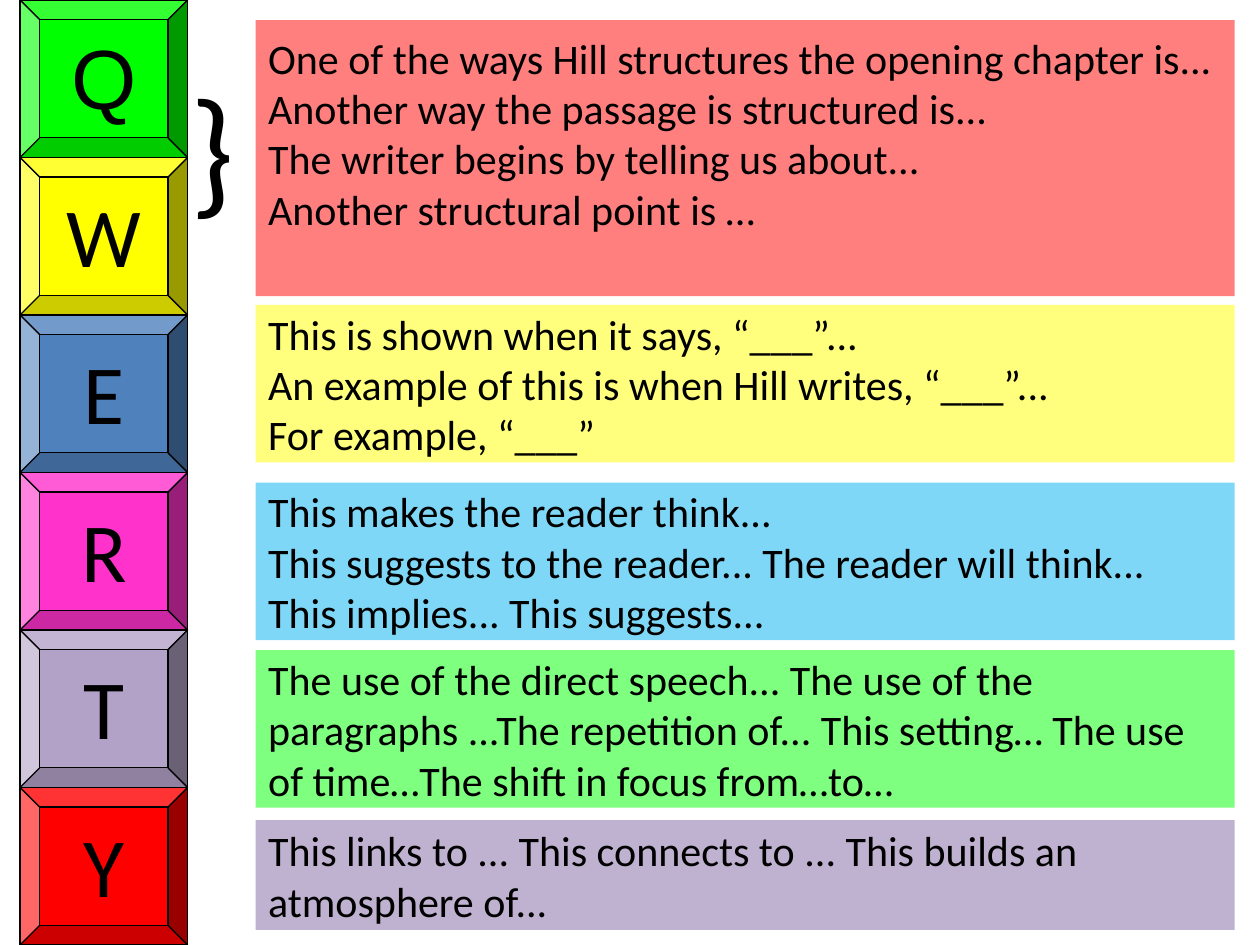
from pptx import Presentation
from pptx.dml.color import RGBColor
from pptx.enum.shapes import MSO_SHAPE
from pptx.enum.text import MSO_ANCHOR, MSO_AUTO_SIZE, PP_ALIGN
from pptx.oxml.ns import qn
from pptx.util import Inches, Pt
from lxml import etree

RECT, BEVEL = MSO_SHAPE.RECTANGLE, MSO_SHAPE.BEVEL
TOP, MIDDLE = MSO_ANCHOR.TOP, MSO_ANCHOR.MIDDLE
LEFT, CENTER = PP_ALIGN.LEFT, PP_ALIGN.CENTER
GROW = MSO_AUTO_SIZE.SHAPE_TO_FIT_TEXT

BLACK = RGBColor(0x00, 0x00, 0x00)
GREEN = RGBColor(0x00, 0xFF, 0x00)
YELLOW = RGBColor(0xFF, 0xFF, 0x00)
BLUE = RGBColor(0x4F, 0x81, 0xBD)
PINK = RGBColor(0xFF, 0x33, 0xCC)
LILAC = RGBColor(0xB3, 0xA2, 0xC7)
RED = RGBColor(0xFF, 0x00, 0x00)
SKY = RGBColor(0x00, 0xB0, 0xF0)
PURPLE = RGBColor(0x80, 0x64, 0xA2)

prs = Presentation()
prs.slide_width, prs.slide_height = Inches(10), Inches(7.5)
slide = prs.slides.add_slide(prs.slide_layouts[6])


def write(shape, text, size, align, anchor, font="Calibri"):
    frame = shape.text_frame
    frame.word_wrap = True
    frame.vertical_anchor = anchor
    frame.text = text
    for para in frame.paragraphs:
        para.alignment = align
        for run in para.runs:
            run.font.name = font
            run.font.size = Pt(size)
            run.font.color.rgb = BLACK


def add_block(kind, left, top, width, height, color):
    shape = slide.shapes.add_shape(
        kind, Inches(left), Inches(top), Inches(width), Inches(height))
    shape.shadow.inherit = False
    shape.fill.solid()
    shape.fill.fore_color.rgb = color
    return shape


# Sentence starters: top, height, colour, opacity in percent, text
# (\v breaks a line, \n starts a paragraph)
panels = [
    (0.16, 2.19, RED, 50,
     "One of the ways Hill structures the opening chapter is...\v"
     "Another way the passage is structured is...\v"
     "The writer begins by telling us about...\v"
     "Another structural point is …"),
    (2.42, 1.25, YELLOW, 51,
     "This is shown when it says, “___”...\n"
     "An example of this is when Hill writes, “___”...\n"
     "For example, “___”"),
    (3.83, 1.25, SKY, 50,
     "This makes the reader think...\n"
     "This suggests to the reader... The reader will think... "
     "This implies... This suggests..."),
    (5.16, 1.25, GREEN, 50,
     "The use of the direct speech... The use of the paragraphs "
     "...The repetition of... This setting… The use of time…"
     "The shift in focus from…to…"),
    (6.51, 0.87, PURPLE, 50,
     "This links to ... This connects to ... "
     "This builds an atmosphere of..."),
]
boxes = []
for top, height, color, alpha, text in panels:
    box = add_block(RECT, 2.03, top, 7.77, height, color)
    box.line.fill.background()
    tint = box.fill._xPr.find(qn("a:solidFill"))[0]
    etree.SubElement(tint, qn("a:alpha"), val=str(alpha * 1000))
    write(box, text, 24, LEFT, MIDDLE)
    boxes.append(box)
# The first panel keeps one line free at its foot
boxes[0].text_frame.margin_bottom = Inches(0.45)

# Column of keys
keys = [("Q", GREEN), ("W", YELLOW), ("E", BLUE),
        ("R", PINK), ("T", LILAC), ("Y", RED)]
for row, (letter, color) in enumerate(keys):
    key = add_block(BEVEL, 0.16, row * 1.25, 1.33, 1.25, color)
    key.line.color.rgb = BLACK
    key.line.width = Pt(0.75)
    write(key, letter, 48, CENTER, TOP, "Arial" if letter == "Q" else "Calibri")

# Brace joining the first two keys
brace = slide.shapes.add_textbox(
    Inches(1.41), Inches(0.43), Inches(0.55), Inches(1.45))
write(brace, "}", 80, LEFT, TOP)
brace.text_frame.auto_size = GROW

prs.save("out.pptx")
